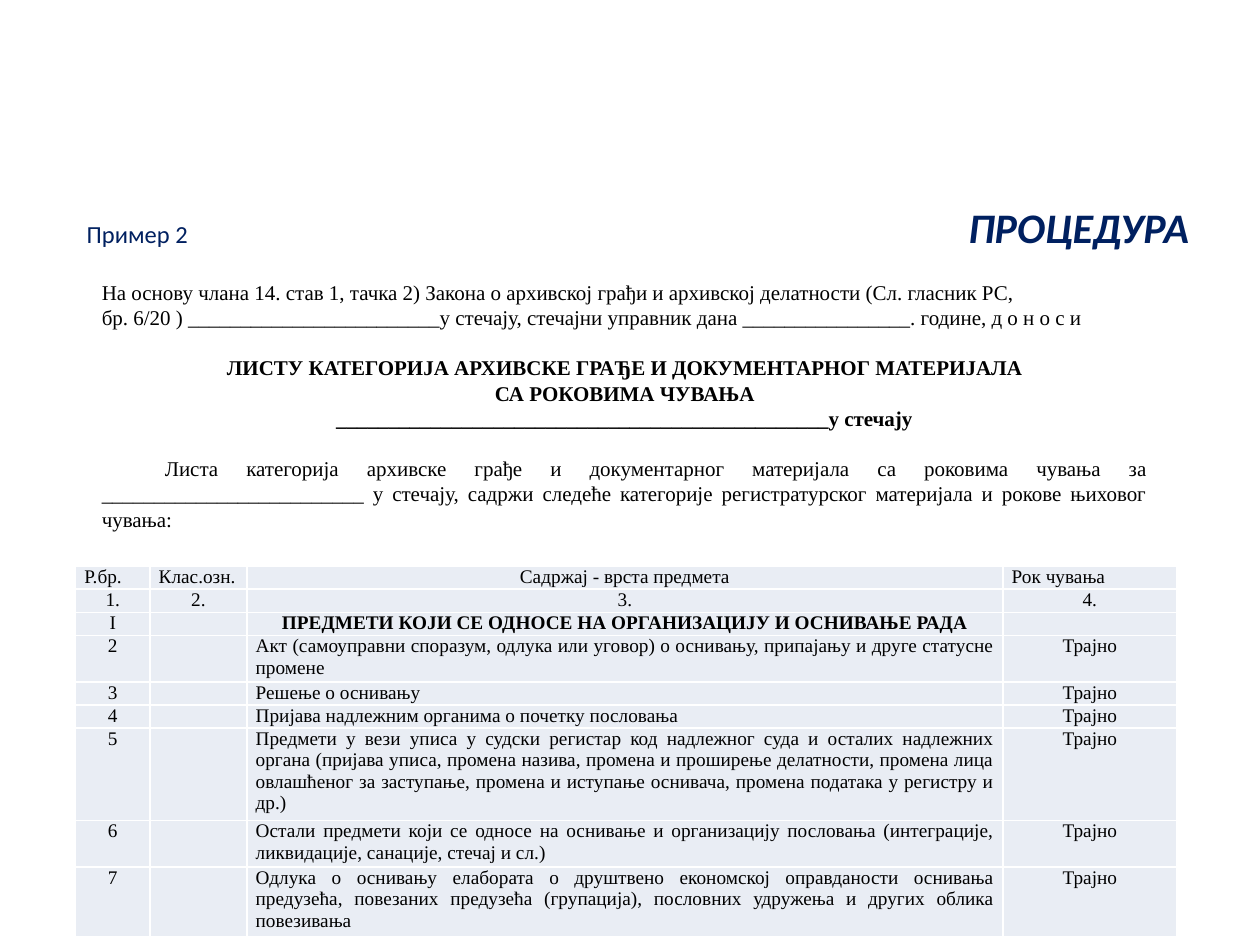
"""Build the slide with the list of archive categories and their retention periods."""
from dataclasses import dataclass
from typing import Optional

from lxml import etree
from pptx import Presentation
from pptx.dml.color import RGBColor
from pptx.enum.text import PP_ALIGN
from pptx.oxml.ns import qn
from pptx.util import Emu, Inches, Pt

LEFT, CENTER, JUSTIFY = PP_ALIGN.LEFT, PP_ALIGN.CENTER, PP_ALIGN.JUSTIFY


@dataclass(frozen=True)
class Theme:
    """Colours, fonts and type sizes in points."""
    navy: str = "002060"
    ink: str = "000000"
    cell: str = "E9EDF4"
    rule: str = "FFFFFF"
    heading_font: str = "Calibri"
    body_font: str = "Times New Roman"
    label: float = 14
    heading: float = 24
    body: float = 12
    entry: float = 11
    leading: float = 14.4


@dataclass(frozen=True)
class Area:
    """A place given as shares of the slide's width and height."""
    left: float
    top: float
    width: float
    height: float

    def place(self) -> tuple[Emu, Emu, Emu, Emu]:
        """Return left, top, width and height as lengths."""
        return (Emu(int(self.left * WIDTH)), Emu(int(self.top * HEIGHT)),
                Emu(int(self.width * WIDTH)), Emu(int(self.height * HEIGHT)))


@dataclass(frozen=True)
class Clause:
    """A paragraph of the decision."""
    text: str
    align: PP_ALIGN = CENTER
    bold: bool = False
    gap_lines: int = 0
    indent: float = 0


@dataclass(frozen=True)
class Entry:
    """A table row, as tall as its number of lines."""
    number: str
    subject: str
    period: str = "Трајно"
    mark: str = ""
    lines: int = 1
    aligns: tuple = (CENTER, CENTER, JUSTIFY, CENTER)
    bold: bool = False


THEME = Theme()
WIDTH, HEIGHT = Inches(10), Inches(7.5)
HEADING_AREA = Area(0.059, 0.207, 0.9, 0.08)
DECISION_AREA = Area(0.071, 0.289, 0.85, 0.31)
LIST_AREA = Area(0.06, 0.599, 0.874, 0.39)
COLUMN_SHARES = (0.059, 0.077, 0.6, 0.138)
HEADING_TAB = 0.875

DECISION = (
    Clause("На основу члана 14. став 1, тачка 2) Закона о архивској грађи и архивској "
           "делатности (Сл. гласник РС,\vбр. 6/20 ) ________________________у стечају, "
           "стечајни управник дана ________________. године, д о н о с и", LEFT),
    Clause("ЛИСТУ КАТЕГОРИЈА АРХИВСКЕ ГРАЂЕ И ДОКУМЕНТАРНОГ МАТЕРИЈАЛА",
           bold=True, gap_lines=1),
    Clause("СА РОКОВИМА ЧУВАЊА", bold=True),
    Clause("_______________________________________________у стечају", bold=True),
    Clause("Листа категорија архивске грађе и документарног материјала са роковима чувања "
           "за _________________________ у стечају, садржи следеће категорије "
           "регистратурског материјала и рокове њиховог чувања:",
           JUSTIFY, gap_lines=1, indent=0.05),
)

ENTRIES = (
    Entry("Р.бр.", "Садржај - врста предмета", "Рок чувања", "Клас.озн.",
          aligns=(JUSTIFY, JUSTIFY, CENTER, JUSTIFY)),
    Entry("1.", "3.", "4.", "2.", aligns=(CENTER,) * 4),
    Entry("I", "ПРЕДМЕТИ КОЈИ СЕ ОДНОСЕ НА ОРГАНИЗАЦИЈУ И ОСНИВАЊЕ РАДА", "",
          aligns=(CENTER,) * 4, bold=True),
    Entry("2", "Акт (самоуправни споразум, одлука или уговор) о оснивању, припајању "
          "и друге статусне промене", lines=2),
    Entry("3", "Решење о оснивању"),
    Entry("4", "Пријава надлежним органима о почетку пословања"),
    Entry("5", "Предмети у вези уписа у судски регистар код надлежног суда и осталих "
          "надлежних органа (пријава уписа, промена назива, промена и проширење делатности, "
          "промена лица овлашћеног за заступање, промена и иступање оснивача, промена "
          "података у регистру и др.)", lines=4),
    Entry("6", "Остали предмети који се односе на оснивање и организацију пословања "
          "(интеграције, ликвидације, санације, стечај и сл.)", lines=2),
    Entry("7", "Одлука о оснивању елабората о друштвено економској оправданости оснивања "
          "предузећа, повезаних предузећа (групација), пословних удружења и других облика "
          "повезивања", lines=3),
)


def add_run(paragraph, text: str, size: float, font: str = THEME.body_font,
            color: str = THEME.ink, bold: bool = False,
            italic: Optional[bool] = None) -> None:
    """Add one formatted run to a paragraph."""
    run = paragraph.add_run()
    run.text = text
    run.font.name, run.font.size = font, Pt(size)
    run.font.bold, run.font.italic = bold, italic
    run.font.color.rgb = RGBColor.from_string(color)


def add_frame(slide, area: Area):
    """Add a wrapping text box and return its frame."""
    frame = slide.shapes.add_textbox(*area.place()).text_frame
    frame.word_wrap = True
    return frame


def draw_heading(slide) -> None:
    """Draw the example label with the procedure title at a right tab."""
    line = add_frame(slide, HEADING_AREA).paragraphs[0]
    tabs = etree.SubElement(line._p.get_or_add_pPr(), qn("a:tabLst"))
    etree.SubElement(tabs, qn("a:tab"), pos=str(int(HEADING_TAB * WIDTH)), algn="r")
    add_run(line, "Пример 2", THEME.label, THEME.heading_font, THEME.navy)
    add_run(line, "\tПРОЦЕДУРА", THEME.heading, THEME.heading_font, THEME.navy, True, True)


def draw_decision(slide, clauses: tuple[Clause, ...]) -> None:
    """Draw the paragraphs of the decision."""
    frame = add_frame(slide, DECISION_AREA)
    for index, clause in enumerate(clauses):
        paragraph = frame.add_paragraph() if index else frame.paragraphs[0]
        paragraph.alignment = clause.align
        paragraph.line_spacing = Pt(THEME.leading)
        if clause.gap_lines:
            paragraph.space_before = Pt(clause.gap_lines * THEME.leading)
        if clause.indent:
            paragraph._p.get_or_add_pPr().set("indent", str(int(clause.indent * WIDTH)))
        for part, text in enumerate(clause.text.split("\v")):
            if part:
                paragraph.add_line_break()
            add_run(paragraph, text, THEME.body, bold=clause.bold)


def style_cell(cell) -> None:
    """Set the margins, borders and fill of a cell."""
    cell.margin_left = cell.margin_right = Inches(0.07)
    cell.margin_top = cell.margin_bottom = 0
    properties = cell._tc.get_or_add_tcPr()
    for side in ("lnL", "lnR", "lnT", "lnB"):
        border = etree.SubElement(properties, qn(f"a:{side}"), w=str(Pt(1)))
        paint = etree.SubElement(border, qn("a:solidFill"))
        etree.SubElement(paint, qn("a:srgbClr"), val=THEME.rule)
    cell.fill.solid()
    cell.fill.fore_color.rgb = RGBColor.from_string(THEME.cell)


def draw_list(slide, entries: tuple[Entry, ...]) -> None:
    """Draw the table of categories and retention periods."""
    table = slide.shapes.add_table(len(entries), len(COLUMN_SHARES),
                                   *LIST_AREA.place()).table
    line_height = LIST_AREA.height * HEIGHT / sum(entry.lines for entry in entries)
    for column, share in zip(table.columns, COLUMN_SHARES):
        column.width = Emu(int(share * WIDTH))
    for row, entry in zip(table.rows, entries):
        row.height = Emu(int(entry.lines * line_height))
        texts = (entry.number, entry.mark, entry.subject, entry.period)
        for position, (cell, text, align) in enumerate(zip(row.cells, texts, entry.aligns)):
            style_cell(cell)
            paragraph = cell.text_frame.paragraphs[0]
            paragraph.alignment = align
            if text:
                add_run(paragraph, text, THEME.entry, bold=entry.bold and position == 2)
            else:
                etree.SubElement(paragraph._p, qn("a:endParaRPr"),
                                 sz=str(int(THEME.entry * 100)))


def main() -> None:
    """Build and save the presentation."""
    deck = Presentation()
    deck.slide_width, deck.slide_height = WIDTH, HEIGHT
    slide = deck.slides.add_slide(deck.slide_layouts[6])
    draw_heading(slide)
    draw_decision(slide, DECISION)
    draw_list(slide, ENTRIES)
    deck.save("out.pptx")


if __name__ == "__main__":
    main()
